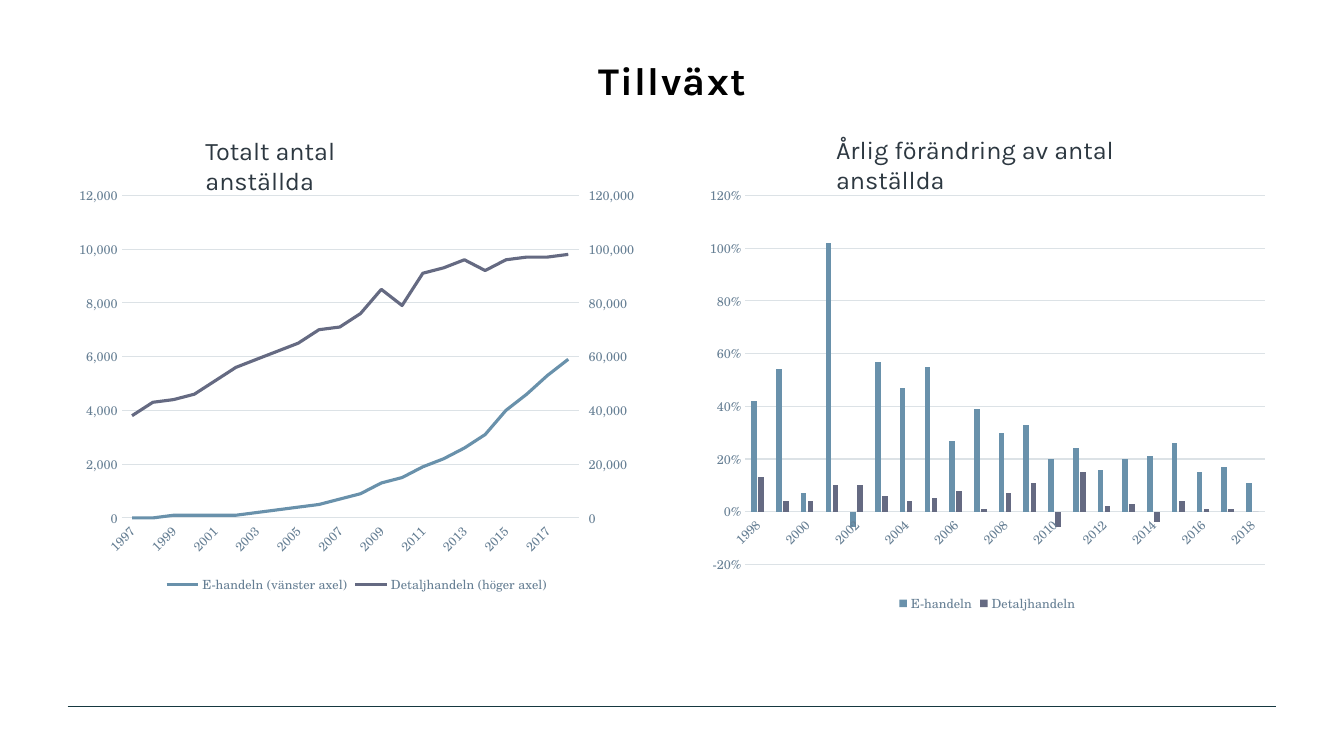
from copy import deepcopy

from lxml.etree import SubElement
from pptx import Presentation
from pptx.chart.data import CategoryChartData
from pptx.dml.color import RGBColor
from pptx.enum.chart import XL_CHART_TYPE as ChartType
from pptx.enum.chart import XL_LEGEND_POSITION as LegendPosition
from pptx.enum.chart import XL_TICK_LABEL_POSITION as LabelPosition
from pptx.enum.chart import XL_TICK_MARK as TickMark
from pptx.enum.shapes import MSO_CONNECTOR as Connector
from pptx.enum.text import MSO_ANCHOR as Anchor
from pptx.enum.text import MSO_AUTO_SIZE as AutoSize
from pptx.enum.text import PP_ALIGN as Align
from pptx.oxml.ns import qn
from pptx.util import Inches, Pt

BLACK = RGBColor(0x00, 0x00, 0x00)
INK = RGBColor(0x2D, 0x38, 0x41)
RULE = RGBColor(0x16, 0x38, 0x40)
AXIS_TEXT = RGBColor(0x66, 0x7F, 0x94)
GRID = RGBColor(0xDC, 0xE2, 0xE6)
SERIES_COLORS = (RGBColor(0x69, 0x91, 0xAB), RGBColor(0x65, 0x6A, 0x82))
HEADING_FONT = "Karla"
CHART_FONT = "TeX Gyre Schola"

WIDTH, HEIGHT = 13.33, 7.5
MARGIN = 0.67
COLUMN = (WIDTH - 2 * MARGIN) / 12
CHART_TOP = 1.76
CHART_COLUMNS = 5.74
RIGHT_CHART = 12 - CHART_COLUMNS

EMPLOYEES = {
    "E-handeln (vänster axel)": (
        0, 0, 100, 100, 100, 100, 200, 300, 400, 500, 700, 900, 1300, 1500,
        1900, 2200, 2600, 3100, 4000, 4600, 5300, 5900),
    "Detaljhandeln (höger axel)": (
        38000, 43000, 44000, 46000, 51000, 56000, 59000, 62000, 65000, 70000,
        71000, 76000, 85000, 79000, 91000, 93000, 96000, 92000, 96000, 97000,
        97000, 98000),
}
YEARLY_CHANGE = {
    "E-handeln": (
        0.42, 0.54, 0.07, 1.02, -0.06, 0.57, 0.47, 0.55, 0.27, 0.39, 0.3,
        0.33, 0.2, 0.24, 0.16, 0.2, 0.21, 0.26, 0.15, 0.17, 0.11),
    "Detaljhandeln": (
        0.13, 0.04, 0.04, 0.1, 0.1, 0.06, 0.04, 0.05, 0.08, 0.01, 0.07, 0.11,
        -0.06, 0.15, 0.02, 0.03, -0.04, 0.04, 0.01, 0.01, 0),
}


def column(number):
    """Return the left edge of a grid column."""
    return Inches(MARGIN + number * COLUMN)


def format_font(font, size, color, name):
    """Apply size, colour and typeface to a font."""
    font.size, font.name = Pt(size), name
    font.color.rgb = color


def write(shape, text, size=18, color=INK, font=HEADING_FONT, bold=False,
          align=Align.LEFT, spacing=0, auto_size=AutoSize.NONE):
    """Fill a shape with one formatted paragraph."""
    frame = shape.text_frame
    frame.word_wrap = True
    frame.auto_size = auto_size
    frame.vertical_anchor = Anchor.TOP
    paragraph = frame.paragraphs[0]
    paragraph.alignment = align
    run = paragraph.add_run()
    run.text = text
    run.font.bold = bold
    format_font(run.font, size, color, font)
    if spacing:
        run.font._element.set("spc", str(spacing * 100))


def add_heading(slide, text, left, top, columns):
    """Add the heading above a chart."""
    heading = slide.shapes.add_textbox(
        column(left), Inches(top), Inches(columns * COLUMN), Inches(0.4))
    write(heading, text, auto_size=AutoSize.SHAPE_TO_FIT_TEXT)


def add_rule(slide, top):
    """Draw the thin line across the foot of the slide."""
    rule = slide.shapes.add_connector(
        Connector.STRAIGHT, column(0), Inches(top), column(12), Inches(top))
    rule.line.color.rgb = RULE
    rule.line.width = Pt(1)
    SubElement(rule._element.spPr, qn("a:effectLst"))


def format_axes(chart, number_format):
    """Style the category axis, the value axis and its gridlines."""
    years, values = chart.category_axis, chart.value_axis
    for axis in (years, values):
        axis.major_tick_mark = axis.minor_tick_mark = TickMark.NONE
        format_font(axis.tick_labels.font, 9, AXIS_TEXT, CHART_FONT)
    years.has_major_gridlines = False
    years.tick_label_position = LabelPosition.NEXT_TO_AXIS
    years._element.find(qn("c:txPr")).find(qn("a:bodyPr")).set("rot", "-2700000")
    values.has_major_gridlines = True
    values.format.line.fill.background()
    values.tick_labels.number_format = number_format
    values.tick_labels.number_format_is_linked = False
    for line in (years.format.line, values.major_gridlines.format.line):
        line.color.rgb = GRID
        line.width = Pt(0.75)


def add_chart(slide, kind, left, height, first_year, values, number_format):
    """Add a styled chart with a legend below and return it."""
    data = CategoryChartData(number_format=number_format)
    data.categories = [str(year) for year in range(first_year, 2019)]
    for name, numbers in values.items():
        data.add_series(name, numbers)
    chart = slide.shapes.add_chart(
        kind, column(left), Inches(CHART_TOP),
        Inches(CHART_COLUMNS * COLUMN), Inches(height), data).chart
    chart.has_title = False
    format_font(chart.font, 10, INK, CHART_FONT)
    chart.has_legend = True
    chart.legend.position = LegendPosition.BOTTOM
    chart.legend.include_in_layout = False
    format_font(chart.legend.font, 9, AXIS_TEXT, CHART_FONT)
    chart.plots[0].vary_by_categories = False
    format_axes(chart, number_format)
    return chart


def move_to_right_axis(chart):
    """Plot the second series against a value axis on the right."""
    left_plot = chart.plots[0]._element
    right_plot = deepcopy(left_plot)
    left_plot.remove(left_plot.findall(qn("c:ser"))[1])
    right_plot.remove(right_plot.findall(qn("c:ser"))[0])
    left_plot.addnext(right_plot)
    years = deepcopy(chart.category_axis._element)
    values = deepcopy(chart.value_axis._element)
    chart.value_axis._element.addnext(values)
    values.addnext(years)
    for axis_id, number in zip(right_plot.findall(qn("c:axId")), ("5001", "5002")):
        axis_id.set("val", number)
    for axis, own, crossing in ((years, "5001", "5002"), (values, "5002", "5001")):
        axis.find(qn("c:axId")).set("val", own)
        axis.find(qn("c:crossAx")).set("val", crossing)
    years.find(qn("c:delete")).set("val", "1")
    values.remove(values.find(qn("c:majorGridlines")))
    values.find(qn("c:axPos")).set("val", "r")
    values.find(qn("c:crosses")).set("val", "max")
    values.find(qn("c:majorTickMark")).set("val", "out")
    values.find(qn("c:scaling")).find(qn("c:max")).set("val", "120000")


def add_employee_lines(slide):
    """Add the line chart of employees on two value axes."""
    chart = add_chart(slide, ChartType.LINE, 0, 4.17, 1997, EMPLOYEES, "#,##0")
    chart.value_axis.minimum_scale = 0
    chart.value_axis.maximum_scale = 12000
    for series, color in zip(chart.plots[0].series, SERIES_COLORS):
        series.smooth = False
        series.format.line.color.rgb = color
        series.format.line.width = Pt(2.25)
    move_to_right_axis(chart)


def add_change_columns(slide):
    """Add the column chart of yearly change."""
    chart = add_chart(slide, ChartType.COLUMN_CLUSTERED, RIGHT_CHART, 4.36,
                      1998, YEARLY_CHANGE, "0%")
    plot = chart.plots[0]
    plot.gap_width, plot.overlap = 219, -27
    for series, color in zip(plot.series, SERIES_COLORS):
        series.invert_if_negative = False
        series.format.fill.solid()
        series.format.fill.fore_color.rgb = color


def main():
    """Build the slide and save it."""
    deck = Presentation()
    deck.slide_width, deck.slide_height = Inches(WIDTH), Inches(HEIGHT)
    slide = deck.slides.add_slide(deck.slide_layouts[5])
    add_rule(slide, 7.01)
    title = slide.shapes.title
    title.left, title.top = column(0), Inches(0.51)
    title.width, title.height = Inches(12 * COLUMN), Inches(1.25)
    write(title, "Tillväxt", size=28, color=BLACK, bold=True,
          align=Align.CENTER, spacing=1)
    add_employee_lines(slide)
    add_change_columns(slide)
    add_heading(slide, "Totalt antal anställda", 1.27, 1.29, 2.62)
    add_heading(slide, "Årlig förändring av antal anställda", 7.53, 1.28, 4.06)
    deck.save("out.pptx")


if __name__ == "__main__":
    main()
